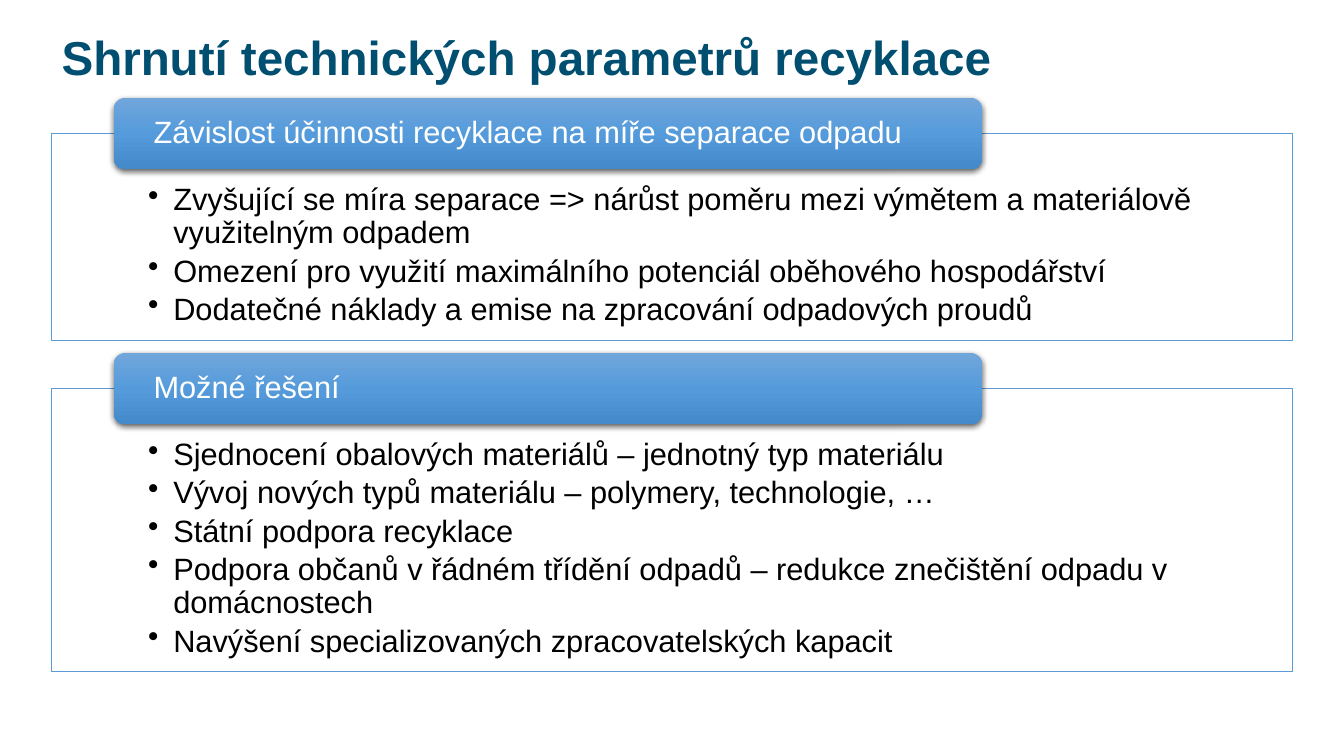
from copy import deepcopy

from lxml import etree
from pptx import Presentation
from pptx.dml.color import RGBColor
from pptx.enum.shapes import MSO_SHAPE
from pptx.enum.text import MSO_ANCHOR, MSO_AUTO_SIZE, PP_ALIGN
from pptx.oxml.ns import qn
from pptx.util import Pt

RECT, ROUND = MSO_SHAPE.RECTANGLE, MSO_SHAPE.ROUNDED_RECTANGLE
TOP, MIDDLE = MSO_ANCHOR.TOP, MSO_ANCHOR.MIDDLE
LEFT = PP_ALIGN.LEFT
FIXED = MSO_AUTO_SIZE.NONE

TEAL = RGBColor(0x00, 0x4F, 0x71)
BLUE = RGBColor(0x5B, 0x9B, 0xD5)
WHITE = RGBColor(0xFF, 0xFF, 0xFF)
BLACK = RGBColor(0x00, 0x00, 0x00)
SHADES = [
    RGBColor(0x71, 0xA6, 0xDB),
    RGBColor(0x55, 0x9B, 0xDB),
    RGBColor(0x44, 0x8A, 0xCA),
]

EDGE, WIDTH = 36.8, 886.2
INDENT = 18

# Heading, top of the frame, height of the frame, bullets
PANELS = [
    ("Závislost účinnosti recyklace na míře separace odpadu", 95.4, 147.4, [
        "Zvyšující se míra separace => nárůst poměru mezi výmětem a materiálově využitelným odpadem",
        "Omezení pro využití maximálního potenciál oběhového hospodářství",
        "Dodatečné náklady a emise na zpracování odpadových proudů",
    ]),
    ("Možné řešení", 277.6, 201.8, [
        "Sjednocení obalových materiálů – jednotný typ materiálu",
        "Vývoj nových typů materiálu – polymery, technologie, …",
        "Státní podpora recyklace",
        "Podpora občanů v řádném třídění odpadů – redukce znečištění odpadu v domácnostech",
        "Navýšení specializovaných zpracovatelských kapacit",
    ]),
]


def write(shape, lines, color, size, anchor, insets, bold=False, bullet=False):
    frame = shape.text_frame
    left, top, right, bottom = (Pt(n) for n in insets)
    form = {
        "word_wrap": True, "auto_size": FIXED, "vertical_anchor": anchor,
        "margin_left": left, "margin_top": top,
        "margin_right": right, "margin_bottom": bottom,
    }
    for name, value in form.items():
        setattr(frame, name, value)
    for i, line in enumerate(lines):
        para = frame.add_paragraph() if i else frame.paragraphs[0]
        if bullet:
            props = para._p.get_or_add_pPr()
            props.set("marL", str(Pt(INDENT)))
            props.set("indent", str(-Pt(INDENT)))
            etree.SubElement(props, qn("a:buChar"), char="•")
            para.space_after = Pt(3.6)
        para.alignment = LEFT
        para.line_spacing = 0.9
        run = para.add_run()
        run.text = line
        run.font.color.rgb = color
        style = {"name": "Arial", "size": Pt(size), "bold": bold}
        for name, value in style.items():
            setattr(run.font, name, value)


def add(kind, left, top, width, height):
    shape = slide.shapes.add_shape(kind, Pt(left), Pt(top), Pt(width), Pt(height))
    shape.shadow.inherit = False
    return shape


deck = Presentation()
deck.slide_width, deck.slide_height = Pt(960), Pt(540)
slide = deck.slides.add_slide(deck.slide_layouts[5])

# Title
title = slide.shapes.title
place = {"left": EDGE, "top": -4.4, "width": WIDTH, "height": 95}
for name, value in place.items():
    setattr(title, name, Pt(value))
write(title, ["Shrnutí technických parametrů recyklace"], TEAL, 34, MIDDLE,
      (7.2, 3.6, 7.2, 3.6), bold=True)

for heading, top, height, points in PANELS:
    # Frame with bullets
    box = add(RECT, EDGE, top, WIDTH, height)
    box.fill.solid()
    box.fill.fore_color.rgb = WHITE
    tint = box.fill._xPr.find(".//" + qn("a:srgbClr"))
    etree.SubElement(tint, qn("a:alpha"), val="90000")
    box.line.color.rgb = BLUE
    box.line.width = Pt(0.5)
    write(box, points, BLACK, 22, TOP, (69, 36, 69, 12), bullet=True)

    # Heading bar over the top edge of the frame
    bar = add(ROUND, 81.2, top - 25.6, 620.4, 51.2)
    bar.line.fill.background()
    bar.fill.gradient()
    bar.fill.gradient_angle = 270
    stops = bar._element.spPr.find(".//" + qn("a:gsLst"))
    stops.append(deepcopy(stops[0]))
    for i, (stop, shade) in enumerate(zip(bar.fill.gradient_stops, SHADES)):
        stop.color.rgb = shade
        stop.position = i / 2
    effects = bar._element.spPr.find(qn("a:effectLst"))
    cast = etree.SubElement(
        effects, qn("a:outerShdw"), blurRad=str(Pt(4.5)), dist=str(Pt(1.5)),
        dir="5400000", algn="ctr", rotWithShape="0")
    dark = etree.SubElement(cast, qn("a:srgbClr"), val=str(BLACK))
    etree.SubElement(dark, qn("a:alpha"), val="63000")
    write(bar, [heading], WHITE, 22, MIDDLE, (26, 0, 26, 0))

deck.save("out.pptx")
